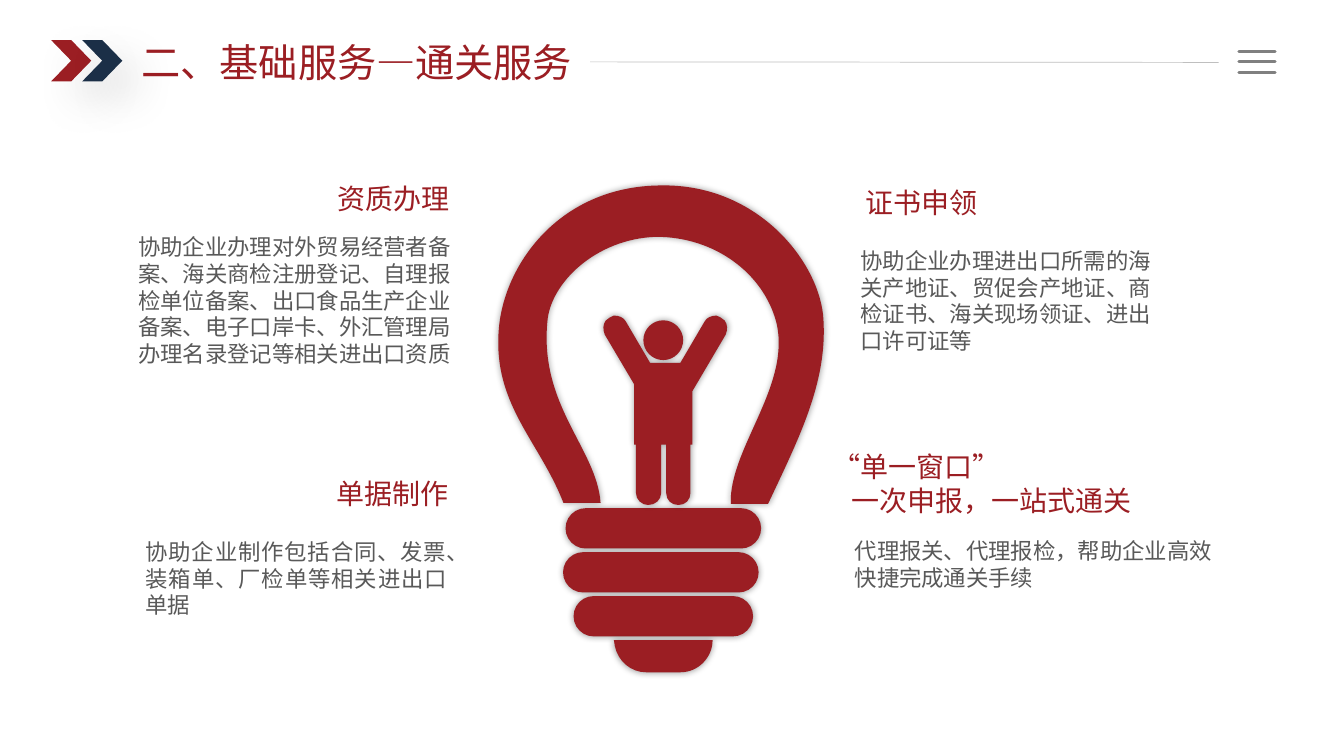
from lxml.etree import SubElement
from pptx import Presentation
from pptx.dml.color import RGBColor
from pptx.enum.shapes import MSO_CONNECTOR as Connector, MSO_SHAPE as Preset
from pptx.enum.text import MSO_AUTO_SIZE as AutoSize, PP_ALIGN as Align
from pptx.oxml.ns import qn
from pptx.util import Pt

RED, NAVY, GREY = "9B1E23", "1B2F47", "595959"
CHEVRON_SHADOW = (14, 32, 19, 45)
BULB_SHADOW = (40, 5, 0, 0)

GLASS = [
    (429, 359.3), (402.5, 359.3),
    (385.2, 314.6, 351.4, 288.7, 356.4, 234),
    (360.7, 187.9, 400.3, 133.2, 471.6, 132.5),
    (542.2, 131, 586.1, 188.6, 588.2, 228.2),
    (591.1, 273.6, 570.2, 313.9, 548.6, 360),
    (522, 360),
    (520.6, 320.4, 565.9, 275, 554.4, 229.7),
    (545, 195.1, 510.5, 169.2, 468.7, 169.2),
    (425.5, 170.6, 393.1, 202.3, 391, 229.7),
    (385.2, 290.2, 426.2, 320.4, 429, 359.3),
]
CAP = [
    (438.5, 457.2), (509, 457.2),
    (509, 469.4, 499, 480.2, 486, 480.2),
    (461.5, 480.2),
    (450.7, 480.2, 441.4, 472.3, 439.2, 461.5),
]
HEAD = [
    (473.8, 228.8),
    (481.6, 228.8, 488, 235.2, 488, 243),
    (488, 250.8, 481.6, 257.2, 473.8, 257.2),
    (466, 257.2, 459.6, 250.8, 459.6, 243),
    (459.6, 235.2, 466, 228.8, 473.8, 228.8),
]
BODY = [
    (511.9, 225.4), (514.8, 226.8), (517.7, 229),
    (519.8, 231.8, 519.8, 235.4, 518.4, 239),
    (494.6, 279.4), (494.6, 317.5), (493.2, 317.5), (493.2, 352.1),
    (493.2, 357.1, 489.6, 360.7, 484.6, 360.7),
    (479.5, 360.7, 475.9, 357.1, 475.9, 352.1),
    (475.9, 317.5), (472.3, 317.5), (472.3, 352.1),
    (472.3, 357.1, 468, 360.7, 463, 360.7),
    (458.6, 360.7, 454.3, 357.1, 454.3, 352.1),
    (454.3, 317.5), (452.9, 317.5), (452.9, 274.3), (432, 239),
    (430.6, 235.4, 430.6, 231.8, 432.7, 229),
    (435.6, 226.8), (438.5, 225.4),
    (442.1, 225.4, 445.7, 226.8, 447.1, 229.7),
    (464.4, 259.2), (486, 259.2), (503.3, 229.7),
    (504.7, 226.8, 508.3, 225.4, 511.9, 225.4),
]


def color(value):
    return RGBColor.from_string(value)


def bend(shape, segments):
    straights = list(shape._element.iter(qn("a:lnTo")))
    for straight, segment in zip(straights, segments):
        if len(segment) == 2:
            continue
        straight.tag = qn("a:cubicBezTo")
        straight.remove(straight[0])
        for x, y in zip(segment[::2], segment[1::2]):
            SubElement(straight, qn("a:pt"), x=str(Pt(x) - shape.left), y=str(Pt(y) - shape.top))


class Painter:
    def __init__(self, page, font):
        self.page = page
        self.font = font
        self.shapes = page.shapes

    def open_group(self):
        self.shapes = self.page.shapes.add_group_shape().shapes

    def close_group(self):
        self.shapes = self.page.shapes

    def finish(self, shape, fill, shadow):
        shape.fill.solid()
        shape.fill.fore_color.rgb = color(fill)
        shape.line.fill.background()
        shape.shadow.inherit = False
        alpha, blur, distance, angle = shadow
        effects = shape._element.spPr.find(qn("a:effectLst"))
        outer = SubElement(effects, qn("a:outerShdw"), blurRad=str(Pt(blur)), dist=str(Pt(distance)),
                           dir=str(angle * 60000), algn="ctr", rotWithShape="0")
        black = SubElement(outer, qn("a:srgbClr"), val="000000")
        SubElement(black, qn("a:alpha"), val=str(alpha * 1000))

    def preset(self, kind, left, top, width, height, fill, shadow):
        shape = self.shapes.add_shape(kind, Pt(left), Pt(top), Pt(width), Pt(height))
        self.finish(shape, fill, shadow)
        return shape

    def outline(self, *contours):
        builder = None
        for contour in contours:
            points = [(Pt(segment[-2]), Pt(segment[-1])) for segment in contour]
            if builder is None:
                builder = self.shapes.build_freeform(*points[0], scale=1.0)
            else:
                builder.move_to(*points[0])
            builder.add_line_segments(points[1:], close=True)
        shape = builder.convert_to_shape()
        bend(shape, [segment for contour in contours for segment in contour[1:]])
        self.finish(shape, RED, BULB_SHADOW)

    def line(self, x1, y1, x2, y2, stroke, weight, cap="flat"):
        line = self.shapes.add_connector(Connector.STRAIGHT, Pt(x1), Pt(y1), Pt(x2), Pt(y2))
        line.line.color.rgb = color(stroke)
        line.line.width = Pt(weight)
        line.line._ln.set("cap", cap)
        SubElement(line._element.spPr, qn("a:effectLst"))

    def text(self, left, top, width, height, lines, size, ink, inset=True, wrap=True, align=None, indent=0):
        box = self.shapes.add_textbox(Pt(left), Pt(top), Pt(width), Pt(height))
        frame = box.text_frame
        frame.word_wrap = wrap
        frame.auto_size = AutoSize.SHAPE_TO_FIT_TEXT if inset else AutoSize.NONE
        if not inset:
            frame.margin_left = frame.margin_right = frame.margin_top = frame.margin_bottom = 0
        frame.text = lines
        for para in frame.paragraphs:
            para.font.name = self.font
            para.font.size = Pt(size)
            para.font.color.rgb = color(ink)
            para.alignment = align
        if indent:
            frame.paragraphs[-1]._p.get_or_add_pPr().set("marL", str(Pt(indent)))

    def heading(self, left, top, width, height, lines, indent=0):
        self.text(left, top, width, height, lines, 20, RED, indent=indent)

    def detail(self, left, top, width, height, lines, inset=False, align=None):
        self.text(left, top, width, height, lines, 16, GREY, inset=inset, align=align)


def main():
    deck = Presentation()
    deck.slide_width, deck.slide_height = Pt(960), Pt(540)
    painter = Painter(deck.slides.add_slide(deck.slide_layouts[6]), "Arial")

    for left, fill in ((36.5, RED), (58.7, NAVY)):
        painter.preset(Preset.CHEVRON, left, 28.6, 28.7, 29.6, fill, CHEVRON_SHADOW)
    painter.line(421.5, 44.2, 870.5, 44.6, "BFBFBF", 0.5)
    painter.open_group()
    for row in range(3):
        y = 36.7 + 7.5 * row
        painter.line(884.9, y, 910.8, y, "808080", 2.25, cap="rnd")
    painter.close_group()
    painter.text(94, 23.6, 327.6, 41, "二、基础服务—通关服务", 28, RED, wrap=False)

    painter.open_group()
    painter.outline(GLASS)
    for row, (left, width) in enumerate(((404, 139.7), (402.2, 139.7), (409.7, 128.2))):
        ring = painter.preset(Preset.ROUNDED_RECTANGLE, left, 363 + 31.4 * row, width, 28.8, RED, BULB_SHADOW)
        ring.adjustments[0] = 0.5
    painter.outline(CAP)
    painter.outline(HEAD, BODY)
    painter.close_group()

    painter.heading(234, 126, 169.9, 31.7, "资质办理")
    painter.detail(98.7, 166.4, 231.8, 130.3,
                   "协助企业办理对外贸易经营者备案、海关商检注册登记、自理报检单位备案、"
                   "出口食品生产企业备案、电子口岸卡、外汇管理局办理名录登记等相关进出口资质")
    painter.heading(233.3, 337, 102.2, 31.7, "单据制作")
    painter.detail(96.9, 380.6, 229.9, 65.5, "协助企业制作包括合同、发票、装箱单、厂检单等相关进出口单据",
                   inset=True, align=Align.JUSTIFY)
    painter.detail(610.5, 383.8, 260.6, 76.3, "代理报关、代理报检，帮助企业高效快捷完成通关手续")
    painter.heading(587.5, 317.5, 389.5, 55.4, "“单一窗口”\n一次申报，一站式通关", indent=13.4)
    painter.heading(611.3, 128.9, 169.9, 31.7, "证书申领")
    painter.detail(614.8, 176.3, 218.2, 74.9,
                   "协助企业办理进出口所需的海关产地证、贸促会产地证、商检证书、海关现场领证、进出口许可证等")
    deck.save("out.pptx")


if __name__ == "__main__":
    main()
